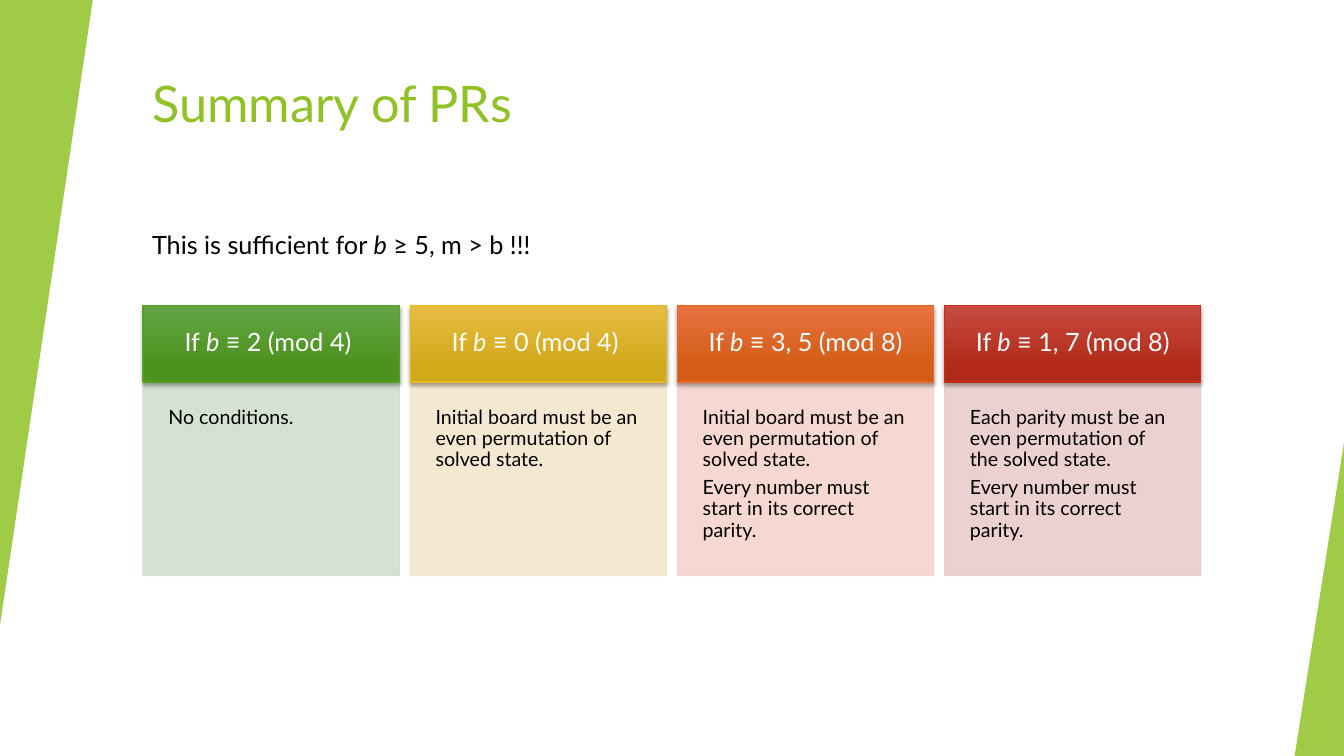
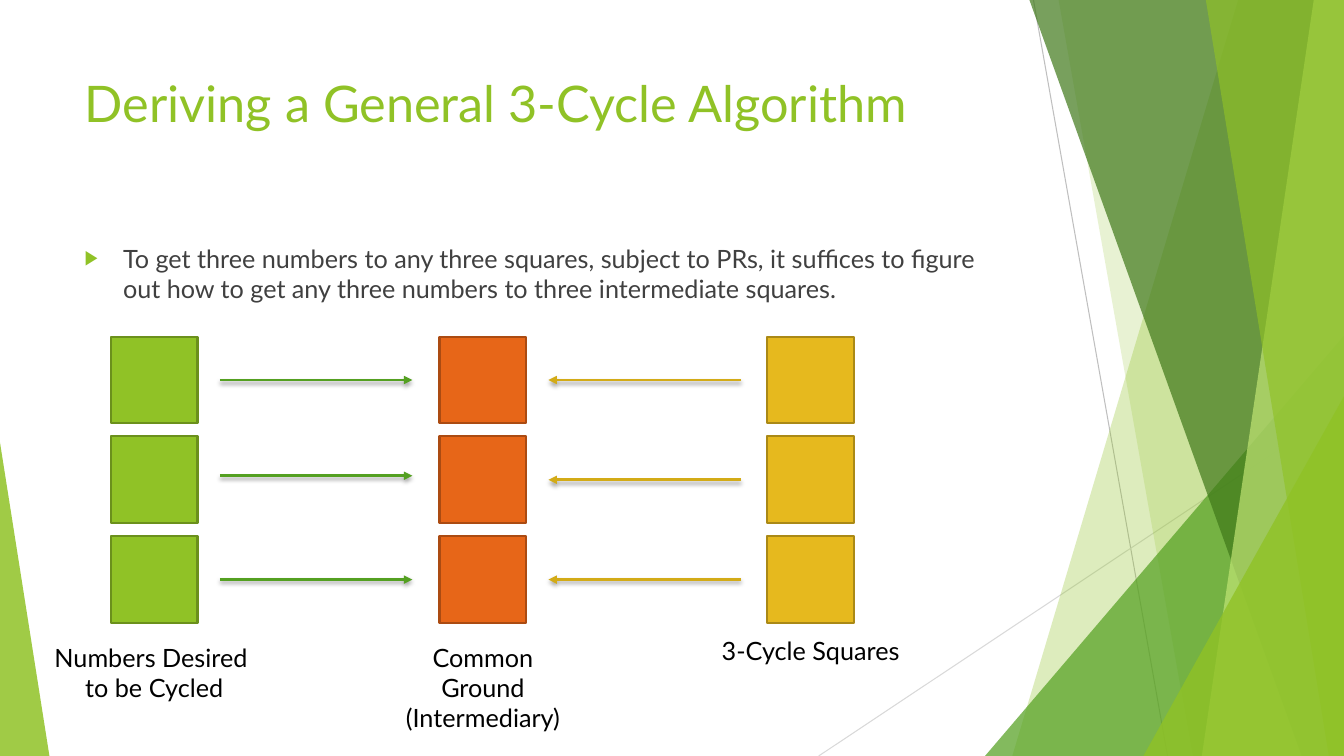
from lxml.etree import SubElement
from pptx import Presentation
from pptx.dml.color import RGBColor
from pptx.enum.shapes import MSO_CONNECTOR, MSO_SHAPE
from pptx.enum.text import MSO_ANCHOR, PP_ALIGN
from pptx.oxml import parse_xml
from pptx.oxml.ns import nsdecls, qn
from pptx.util import Inches, Pt

FONT = "Lato"
LIME, GREEN, DARK_GREEN, PALE_GREEN = "90C226", "54A021", "3F7819", "C0E474"
GOLD, ORANGE, RED = "E6B91E", "E76618", "C42F1A"
BLACK, WHITE, GREY = "000000", "FFFFFF", "404040"


def paint(fill, color, alpha=100):
    """Make a fill solid, with alpha as the percentage of opacity."""
    fill.solid()
    fill.fore_color.rgb = RGBColor.from_string(color)
    if alpha < 100:
        srgb = fill._xPr.find(".//" + qn("a:srgbClr"))
        SubElement(srgb, qn("a:alpha")).set("val", str(alpha * 1000))


def write(p, text, size, color):
    """Fill a paragraph; parts between asterisks become italic."""
    for i, part in enumerate(text.split("*")):
        r = p.add_run()
        r.text = part
        r.font.name = FONT
        r.font.size = Pt(size)
        r.font.italic = i % 2 == 1
        paint(r.font.fill, color)


prs = Presentation()
prs.slide_width, prs.slide_height = Inches(13.33), Inches(7.5)
summary = prs.slides.add_slide(prs.slide_layouts.get_by_name("Title Only"))
cycle = prs.slides.add_slide(prs.slide_layouts.get_by_name("Title and Content"))
raised = []  # shapes and arrows that cast a shadow

# Titles
for s, text, left, width in [
    (summary, "Summary of PRs", 1.41, 11.15),
    (cycle, "Deriving a General 3-Cycle Algorithm", 0.74, 9.4),
]:
    sp = s.shapes.title
    sp.left, sp.top, sp.width, sp.height = Inches(left), Inches(0.67), Inches(width), Inches(1.2)
    sp.text_frame.vertical_anchor = MSO_ANCHOR.TOP
    p = sp.text_frame.paragraphs[0]
    p.alignment = PP_ALIGN.LEFT
    write(p, text, 36, LIME)

# Thin lines behind the facets
for x1, y1, x2, y2, color in [
    (10.25, 0, 11.58, 7.5, "BFBFBF"),
    (13.33, 4.03, 8.12, 7.5, "D9D9D9"),
]:
    line = cycle.shapes.add_connector(
        MSO_CONNECTOR.STRAIGHT, Inches(x1), Inches(y1), Inches(x2), Inches(y2))
    paint(line.line.fill, color)
    line.line.width = Pt(0.75)
    SubElement(line._element.spPr, qn("a:effectLst"))

# Facets: a band has a top and a bottom x and runs to the right edge,
# a triangle has a box, the place of its apex and a rotation
BAND, TRIANGLE = "band", "triangle"
for s, kind, place, color, alpha in [
    (cycle, BAND, (12.28, 10.04), LIME, 30),
    (cycle, BAND, (10.5, 11.83), LIME, 20),
    (cycle, TRIANGLE, (9.77, 3.33, 3.56, 4.17, 1, 0), GREEN, 72),
    (cycle, BAND, (10.21, 12.91), DARK_GREEN, 70),
    (cycle, BAND, (13.03, 11.92), PALE_GREEN, 70),
    (cycle, BAND, (11.96, 13.18), LIME, 65),
    (cycle, TRIANGLE, (11.34, 3.93, 1.99, 3.57, 1, 0), LIME, 80),
    (cycle, TRIANGLE, (0, 4.39, 0.49, 3.11, 0, 0), LIME, 85),
    (summary, TRIANGLE, (0, 0, 0.92, 6.2, 1, 180), LIME, 85),
    (summary, TRIANGLE, (12.84, 4.39, 0.49, 3.11, 1, 0), LIME, 85),
]:
    if kind == BAND:
        top_x, bottom_x = place
        outline = s.shapes.build_freeform(Inches(top_x), 0)
        outline.add_line_segments([
            (Inches(13.33), 0), (Inches(13.33), Inches(7.5)), (Inches(bottom_x), Inches(7.5))])
        sp = outline.convert_to_shape()
    else:
        *box, apex, rotation = place
        sp = s.shapes.add_shape(MSO_SHAPE.ISOSCELES_TRIANGLE, *map(Inches, box))
        sp.adjustments[0] = apex
        sp.rotation = rotation
    paint(sp.fill, color, alpha)
    sp.line.fill.background()
    sp.shadow.inherit = False

# Summary: lead sentence
tf = summary.shapes.add_textbox(Inches(1.41), Inches(2.23), Inches(4.25), Inches(0.4)).text_frame
tf.word_wrap = True
write(tf.paragraphs[0], "This is sufficient for *b* ≥ 5, m > b !!!", 18, BLACK)

# Summary: one card per case
EVEN_BOARD = "Initial board must be an even permutation of solved state."
START_PARITY = "Every number must start in its correct parity."
EACH_PARITY = "Each parity must be an even permutation of the solved state."
cards = [
    ("If *b* ≡ 2 (mod 4) ", ["No conditions."], "63A545", "4D921E", GREEN, "D1DFCD"),
    ("If *b* ≡ 0 (mod 4) ", [EVEN_BOARD], "E7BC43", "D2A91B", GOLD, "F5E6CD"),
    ("If *b* ≡ 3, 5 (mod 8)", [EVEN_BOARD, START_PARITY], "E87242", "D35D16", ORANGE, "F6D3CC"),
    ("If *b* ≡ 1, 7 (mod 8)", [EACH_PARITY, START_PARITY], "C74B42", "B32B18", RED, "EACDCD"),
]
CARD_W, CARD_GAP = 2.54, 0.11
for i, (case, conditions, light, dark, edge, tint) in enumerate(cards):
    left = Inches(1.42 + i * (CARD_W + CARD_GAP))
    body = summary.shapes.add_shape(
        MSO_SHAPE.RECTANGLE, left, Inches(3.79), Inches(CARD_W), Inches(1.92))
    paint(body.fill, tint, 90)
    paint(body.line.fill, tint, 90)

    head = summary.shapes.add_shape(
        MSO_SHAPE.RECTANGLE, left, Inches(3.03), Inches(CARD_W), Inches(0.76))
    head.fill.gradient()
    head.fill.gradient_angle = 270
    start, end = head.fill.gradient_stops
    start.color.rgb, start.position = RGBColor.from_string(light), 0
    end.color.rgb, end.position = RGBColor.from_string(dark), 0.78
    paint(head.line.fill, edge)
    raised.append(head)

    for sp, lines, size, color, inset, anchor, align in [
        (head, [case], 18, WHITE, 0.2, MSO_ANCHOR.MIDDLE, PP_ALIGN.CENTER),
        (body, conditions, 14, BLACK, 0.25, MSO_ANCHOR.TOP, PP_ALIGN.LEFT),
    ]:
        sp.line.width = Pt(1)
        sp.shadow.inherit = False
        tf = sp.text_frame
        tf.word_wrap = True
        tf.vertical_anchor = anchor
        tf.margin_left = tf.margin_right = tf.margin_top = tf.margin_bottom = Inches(inset)
        for n, text in enumerate(lines):
            p = tf.add_paragraph() if n else tf.paragraphs[0]
            p.alignment = align
            p.line_spacing = 0.9
            p.space_after = Pt(size * 0.35)
            write(p, text, size, color)

# Cycle: bulleted sentence
sp = cycle.placeholders[1]
sp.left, sp.top, sp.width, sp.height = Inches(0.74), Inches(2.36), Inches(9.4), Inches(4.24)
p = sp.text_frame.paragraphs[0]
p.space_before = Pt(10)
write(p, "To get three numbers to any three squares, subject to PRs, it suffices to figure "
      "out how to get any three numbers to three intermediate squares.", 18, GREY)
pPr = p._p.get_or_add_pPr()
pPr.set("marL", str(Inches(0.38)))
pPr.set("indent", str(-Inches(0.38)))
SubElement(SubElement(pPr, qn("a:buClr")), qn("a:srgbClr")).set("val", LIME)
SubElement(pPr, qn("a:buSzPct")).set("val", "80000")
SubElement(pPr, qn("a:buFont")).set("typeface", "Arial")
SubElement(pPr, qn("a:buChar")).set("char", "▶")

# Cycle: three columns of squares with captions
SQUARE, PITCH, CAPTION_W = 0.86, 0.99, 2.2
for left, fill, edge, caption_top, caption in [
    (1.1, LIME, "6B901C", 6.32, ["Numbers Desired ", "to be Cycled"]),
    (4.36, ORANGE, "AB4B12", 6.32, ["Common", "Ground", "(Intermediary)"]),
    (7.61, GOLD, "AA8916", 6.25, ["3-Cycle Squares"]),
]:
    for row in range(3):
        sp = cycle.shapes.add_shape(MSO_SHAPE.RECTANGLE, Inches(left), Inches(3.34 + row * PITCH),
                                    Inches(SQUARE), Inches(SQUARE))
        paint(sp.fill, fill)
        paint(sp.line.fill, edge)
        sp.line.width = Pt(1.5)
        sp.shadow.inherit = False
    tf = cycle.shapes.add_textbox(Inches(left + (SQUARE - CAPTION_W) / 2), Inches(caption_top),
                                  Inches(CAPTION_W), Inches(0.1 + 0.3 * len(caption))).text_frame
    tf.word_wrap = True
    for n, text in enumerate(caption):
        p = tf.add_paragraph() if n else tf.paragraphs[0]
        p.alignment = PP_ALIGN.CENTER
        write(p, text, 18, BLACK)

# Cycle: arrows towards the middle column
for x1, x2, color, heights in [
    (2.18, 4.09, GREEN, (3.77, 4.72, 5.75)),
    (7.35, 5.44, "D3AB17", (3.77, 4.76, 5.75)),
]:
    for y in heights:
        arrow = cycle.shapes.add_connector(
            MSO_CONNECTOR.STRAIGHT, Inches(x1), Inches(y), Inches(x2), Inches(y))
        paint(arrow.line.fill, color)
        arrow.line.width = Pt(2)
        SubElement(arrow.line._get_or_add_ln(), qn("a:tailEnd")).set("type", "triangle")
        raised.append(arrow)

# Shadows
for sp in raised:
    spPr = sp._element.spPr
    for old in spPr.findall(qn("a:effectLst")):
        spPr.remove(old)
    spPr.append(parse_xml(
        f'<a:effectLst {nsdecls("a")}><a:outerShdw blurRad="{Pt(3)}" dist="{Pt(2)}" '
        f'dir="5400000" rotWithShape="0"><a:srgbClr val="{BLACK}"><a:alpha val="35000"/>'
        '</a:srgbClr></a:outerShdw></a:effectLst>'))

prs.save("out.pptx")
